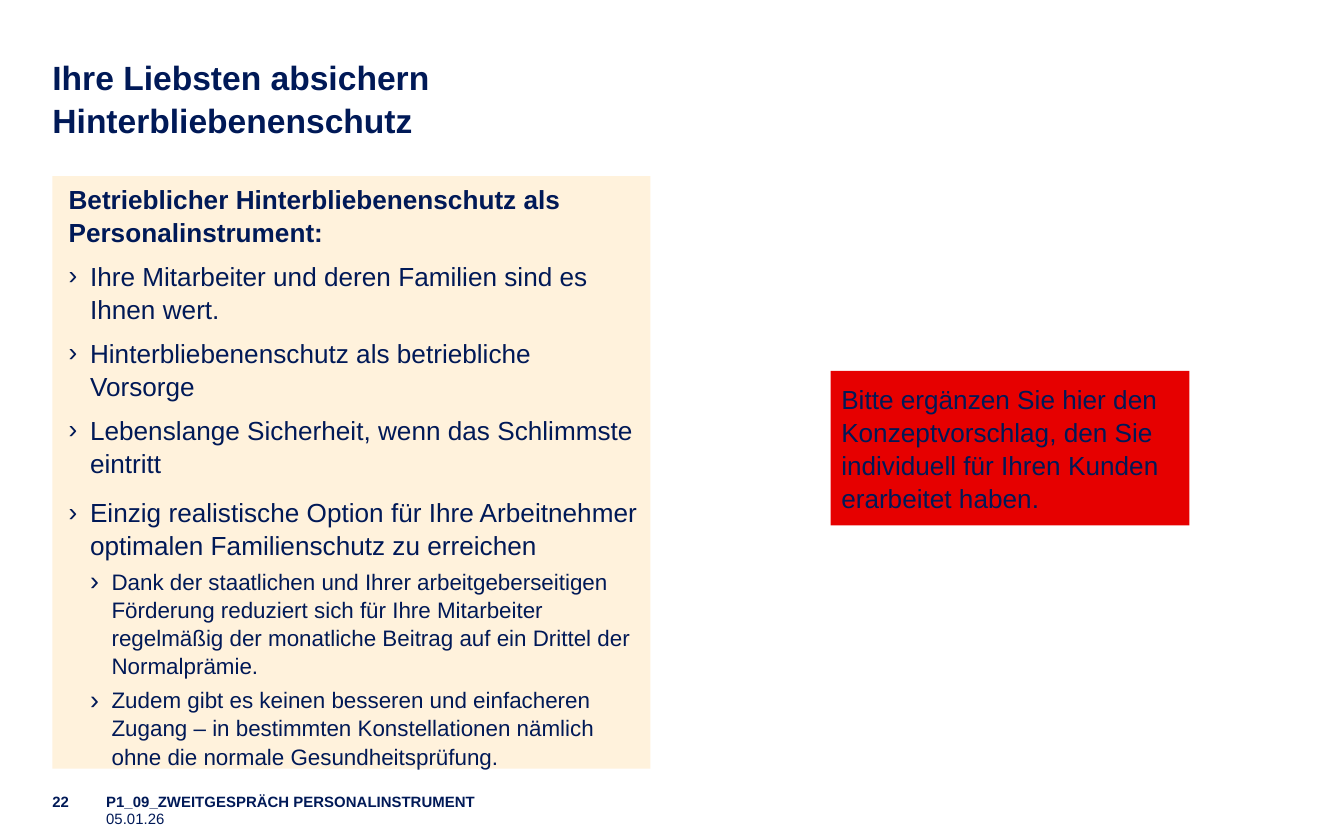
from dataclasses import dataclass

from lxml.etree import SubElement
from pptx import Presentation
from pptx.dml.color import RGBColor
from pptx.enum.shapes import MSO_SHAPE as Shape
from pptx.enum.text import MSO_ANCHOR as Anchor, PP_ALIGN as Align
from pptx.oxml.ns import qn
from pptx.util import Inches, Pt


@dataclass(frozen=True)
class Theme:
    font: str = "Arial"
    navy: str = "001957"
    cream: str = "FFF2DC"
    red: str = "E60000"
    title: int = 18
    body: int = 14
    detail: int = 12
    footer: int = 8
    line_spacing: float = 1.05
    indent: float = 0.16


THEME = Theme()
LEFT = 0.39
FOOTER_LEFT = 0.79
FOOTER_TOP = 5.92

HEADING = "Betrieblicher Hinterbliebenenschutz als Personalinstrument:"
POINTS = [
    "Ihre Mitarbeiter und deren Familien sind es Ihnen wert.",
    "Hinterbliebenenschutz als betriebliche Vorsorge",
    "Lebenslange Sicherheit, wenn das Schlimmste eintritt",
]
OPTION = ("Einzig realistische Option für Ihre Arbeitnehmer optimalen "
          "Familienschutz zu erreichen")
DETAILS = [
    "Dank der staatlichen und Ihrer arbeitgeberseitigen Förderung reduziert "
    "sich für Ihre Mitarbeiter regelmäßig der monatliche Beitrag auf ein "
    "Drittel der Normalprämie.",
    "Zudem gibt es keinen besseren und einfacheren Zugang – in bestimmten "
    "Konstellationen nämlich ohne die normale Gesundheitsprüfung.",
]
REQUEST = ("Bitte ergänzen Sie hier den Konzeptvorschlag, den Sie individuell "
           "für Ihren Kunden erarbeitet haben.")


def set_frame(tf, insets=(0, 0, 0, 0), anchor=Anchor.TOP):
    tf.word_wrap = True
    tf.vertical_anchor = anchor
    tf.margin_left, tf.margin_top, tf.margin_right, tf.margin_bottom = map(Inches, insets)


def add_bullet(p, level):
    p.level = level
    pPr = p._p.get_or_add_pPr()
    pPr.set("marL", str(Inches(THEME.indent * (level + 1))))
    pPr.set("indent", str(-Inches(THEME.indent)))
    color = SubElement(pPr, qn("a:buClr"))
    SubElement(color, qn("a:srgbClr"), val=THEME.navy)
    if level:
        SubElement(pPr, qn("a:buSzPct"), val="120000")
    SubElement(pPr, qn("a:buFont"), typeface=THEME.font)
    SubElement(pPr, qn("a:buChar"), char="›")


def write(p, text, size, bold=False, before=0, after=0, level=None):
    p.text = text
    p.alignment = Align.LEFT
    p.line_spacing = THEME.line_spacing
    p.space_before, p.space_after = Pt(before), Pt(after)
    if level is not None:
        add_bullet(p, level)
    for r in p.runs:
        r.font.name = THEME.font
        r.font.size = Pt(size)
        r.font.bold = bold
        r.font.color.rgb = RGBColor.from_string(THEME.navy)


def add_text(s, box, text, size, bold=False, anchor=Anchor.TOP):
    tf = s.shapes.add_textbox(*map(Inches, box)).text_frame
    set_frame(tf, anchor=anchor)
    write(tf.paragraphs[0], text, size, bold)


def add_panel(s, box, fill, insets):
    sp = s.shapes.add_shape(Shape.RECTANGLE, *map(Inches, box))
    sp.shadow.inherit = False
    sp.fill.solid()
    sp.fill.fore_color.rgb = RGBColor.from_string(fill)
    sp.line.fill.background()
    set_frame(sp.text_frame, insets)
    return sp.text_frame


def add_arguments(s):
    tf = add_panel(s, (LEFT, 1.31, 4.45, 4.41), THEME.cream, (0.12, 0.04, 0.08, 0))
    write(tf.paragraphs[0], HEADING, THEME.body, bold=True, after=6)
    for text in POINTS:
        write(tf.add_paragraph(), text, THEME.body, after=6, level=0)
    write(tf.add_paragraph(), OPTION, THEME.body, before=3, level=0)
    for text in DETAILS:
        write(tf.add_paragraph(), text, THEME.detail, before=3, level=1)


def add_request(s):
    tf = add_panel(s, (6.18, 2.76, 2.67, 1.15), THEME.red, (0.08,) * 4)
    write(tf.paragraphs[0], REQUEST, THEME.body)


def add_footer(s):
    for left, top, width, text, bold in [
        (FOOTER_LEFT, FOOTER_TOP + 0.13, 4.61, "05.01.26", False),
        (FOOTER_LEFT, FOOTER_TOP, 4.61, "P1_09_ZWEITGESPRÄCH PERSONALINSTRUMENT", True),
        (LEFT, FOOTER_TOP, 0.39, "22", True),
    ]:
        add_text(s, (left, top, width, 0.08), text, THEME.footer, bold, Anchor.MIDDLE)


def main():
    prs = Presentation()
    prs.slide_width, prs.slide_height = Inches(10), Inches(6.25)
    s = prs.slides.add_slide(prs.slide_layouts[6])
    add_text(s, (LEFT, 0.41, 9.21, 0.59),
             "Ihre Liebsten absichern\vHinterbliebenenschutz", THEME.title, bold=True)
    add_footer(s)
    add_arguments(s)
    add_request(s)
    prs.save("out.pptx")


if __name__ == "__main__":
    main()
